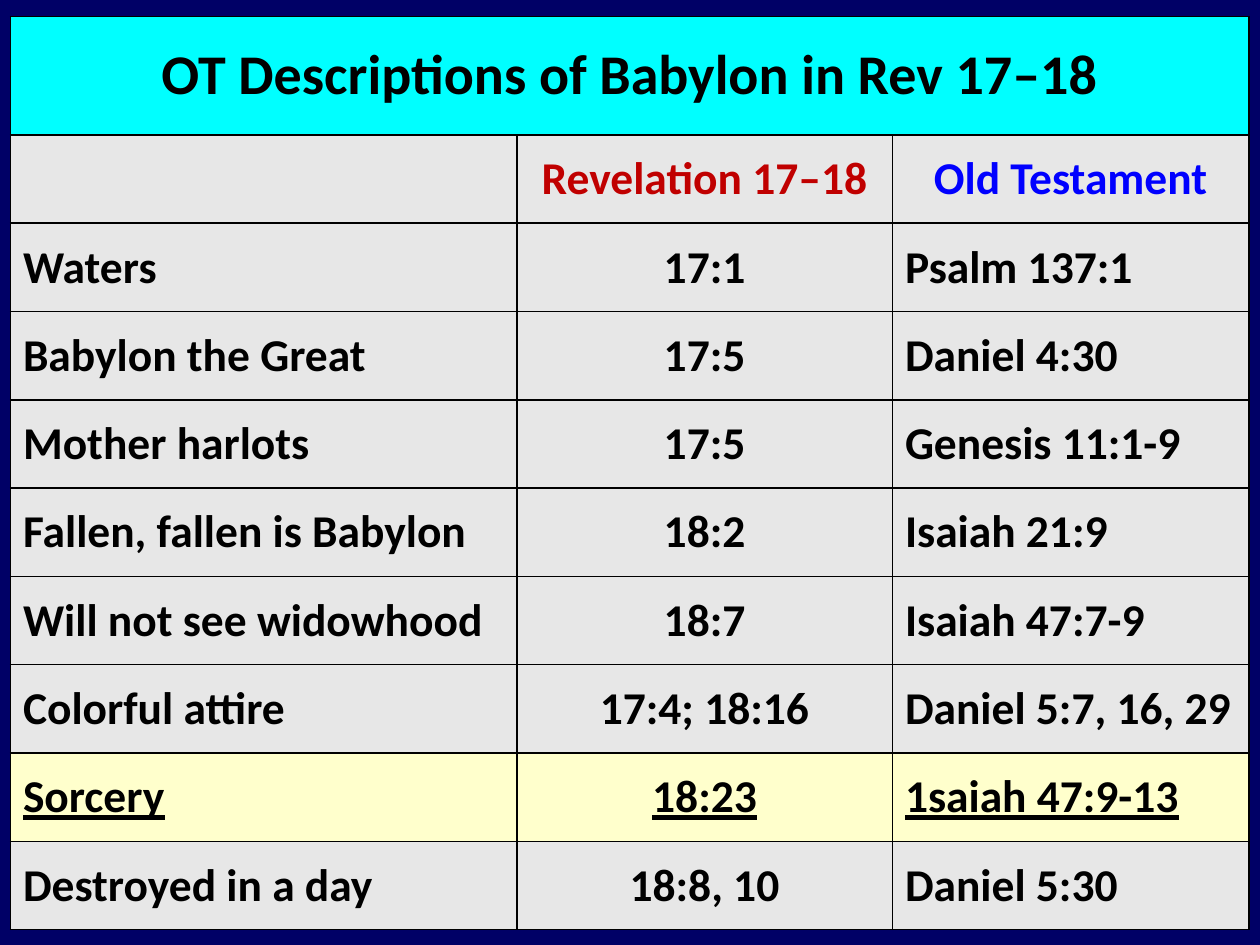
from lxml import etree
from pptx import Presentation
from pptx import util as u
from pptx.dml.color import RGBColor
from pptx.enum import text
from pptx.oxml import ns

NAVY = RGBColor(0x00, 0x00, 0x66)
CYAN = RGBColor(0x00, 0xFF, 0xFF)
GREY = RGBColor(0xE7, 0xE7, 0xE7)
CREAM = RGBColor(0xFF, 0xFF, 0xCC)
BLACK = RGBColor(0x00, 0x00, 0x00)
RED = RGBColor(0xC0, 0x00, 0x00)
BLUE = RGBColor(0x00, 0x00, 0xFF)

TITLE = "OT Descriptions of Babylon in Rev 17–18"
HEADERS = ("", "Revelation 17–18", "Old Testament")
HEADER_COLORS = (BLACK, RED, BLUE)
PARALLELS = [
    ("Waters", "17:1", "Psalm 137:1"),
    ("Babylon the Great", "17:5", "Daniel 4:30"),
    ("Mother harlots", "17:5", "Genesis 11:1-9"),
    ("Fallen, fallen is Babylon", "18:2", "Isaiah 21:9"),
    ("Will not see widowhood", "18:7", "Isaiah 47:7-9"),
    ("Colorful attire", "17:4; 18:16", "Daniel 5:7, 16, 29"),
    ("Sorcery", "18:23", "1saiah 47:9-13"),
    ("Destroyed in a day", "18:8, 10", "Daniel 5:30"),
]
HIGHLIGHT = "Sorcery"
COL_WIDTHS = (10.21, 7.57, 7.19)
TITLE_HEIGHT, ROW_HEIGHT = 2.39, 1.78


class SlideBuilder:
    font = "Calibri"
    size = 26

    def __init__(self, prs, background):
        self.slide = prs.slides.add_slide(prs.slide_layouts[6])
        fill = self.slide.background.fill
        fill.solid()
        fill.fore_color.rgb = background

    def table(self, left, top, widths, heights):
        frame = self.slide.shapes.add_table(
            len(heights), len(widths), u.Cm(left), u.Cm(top),
            u.Cm(sum(widths)), u.Cm(sum(heights)))
        table = frame.table
        for column, width in zip(table.columns, widths):
            column.width = u.Cm(width)
        for row, height in zip(table.rows, heights):
            row.height = u.Cm(height)
        return table

    def borders(self, cell):
        """Outline a cell in black; call before filling it."""
        tcPr = cell._tc.get_or_add_tcPr()
        for side in ("a:lnL", "a:lnR", "a:lnT", "a:lnB"):
            ln = etree.SubElement(tcPr, ns.qn(side), w=str(u.Pt(1)))
            solid = etree.SubElement(ln, ns.qn("a:solidFill"))
            etree.SubElement(solid, ns.qn("a:srgbClr"), val=str(BLACK))

    def cell(self, cell, words, fill, color=BLACK, size=size,
             centred=False, underline=False):
        self.borders(cell)
        cell.fill.solid()
        cell.fill.fore_color.rgb = fill
        cell.vertical_anchor = text.MSO_ANCHOR.MIDDLE
        cell.text = words
        p = cell.text_frame.paragraphs[0]
        p.alignment = text.PP_ALIGN.CENTER if centred else text.PP_ALIGN.LEFT
        p.font.size = u.Pt(size)
        for r in p.runs:
            r.font.name = self.font
            r.font.size = u.Pt(size)
            r.font.bold = True
            r.font.underline = underline
            r.font.color.rgb = color


def main():
    prs = Presentation()
    prs.slide_width, prs.slide_height = u.Cm(25.4), u.Cm(19.05)
    s = SlideBuilder(prs, NAVY)

    heights = [TITLE_HEIGHT] + [ROW_HEIGHT] * (len(PARALLELS) + 1)
    table = s.table(0.21, 0.33, COL_WIDTHS, heights)

    table.cell(0, 0).merge(table.cell(0, 2))
    s.cell(table.cell(0, 0), TITLE, CYAN, size=32, centred=True)
    for col in (1, 2):
        s.borders(table.cell(0, col))

    for col, (words, color) in enumerate(zip(HEADERS, HEADER_COLORS)):
        s.cell(table.cell(1, col), words, GREY, color, centred=True)

    for row, parallel in enumerate(PARALLELS, start=2):
        marked = parallel[0] == HIGHLIGHT
        for col, words in enumerate(parallel):
            s.cell(table.cell(row, col), words, CREAM if marked else GREY,
                   centred=col == 1, underline=marked)

    prs.save("out.pptx")


if __name__ == "__main__":
    main()
